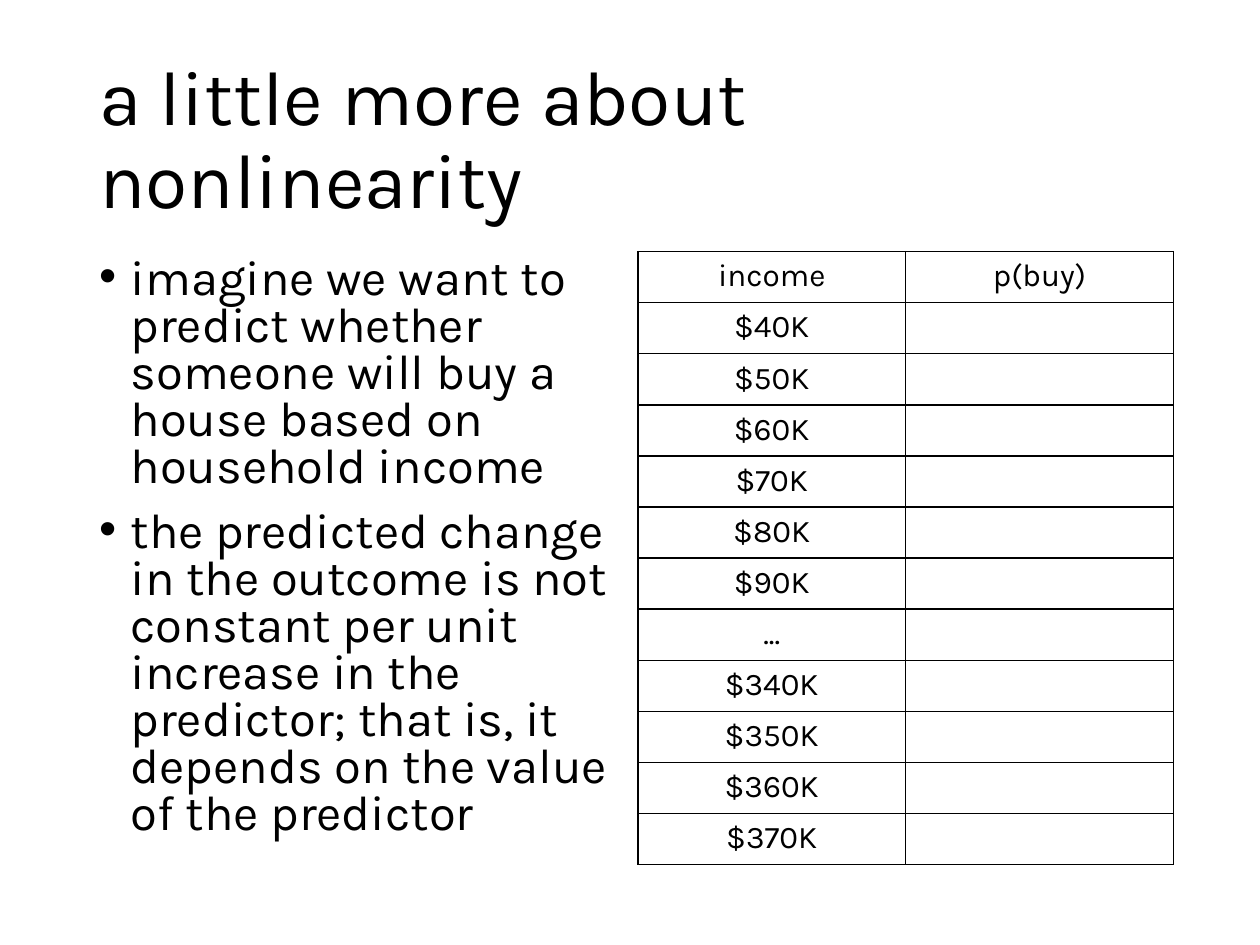
from lxml import etree
from pptx import Presentation
from pptx.dml.color import RGBColor
from pptx.enum.text import MSO_ANCHOR, MSO_AUTO_SIZE, PP_ALIGN
from pptx.oxml.ns import qn
from pptx.util import Pt

LEFT, CENTER = PP_ALIGN.LEFT, PP_ALIGN.CENTER
TOP, MIDDLE = MSO_ANCHOR.TOP, MSO_ANCHOR.MIDDLE
NO_FIT = MSO_AUTO_SIZE.NONE
FONT = "Karla"
COLORS = {"text": "000000", "line": "000000"}

TITLE = "a little more about nonlinearity"
POINTS = [
    "imagine we want to predict whether someone will buy a house based on "
    "household income",
    "the predicted change in the outcome is not constant per unit increase in "
    "the predictor; that is, it depends on the value of the predictor",
]
HEADS = ["income", "p(buy)"]
INCOMES = [
    *(f"${k}K" for k in range(40, 100, 10)),
    "...",
    *(f"${k}K" for k in range(340, 380, 10)),
]


def style(para, size, align):
    """Set the font and alignment of a paragraph."""
    para.alignment = align
    para.font.name = FONT
    para.font.size = Pt(size)
    para.font.color.rgb = RGBColor.from_string(COLORS["text"])


def fill_holder(holder, box, lines, size, spacing, anchor):
    """Move a placeholder and write its paragraphs."""
    holder.left, holder.top, holder.width, holder.height = map(Pt, box)
    frame = holder.text_frame
    frame.text = "\n".join(lines)
    frame.word_wrap = True
    frame.auto_size = NO_FIT
    frame.vertical_anchor = anchor
    for para in frame.paragraphs:
        style(para, size, LEFT)
        para.line_spacing = spacing


def add_bullets(holder, indent, before):
    """Give each paragraph a hanging bullet."""
    for para in holder.text_frame.paragraphs:
        para.space_before = Pt(before)
        props = para._p.get_or_add_pPr()
        props.set("marL", str(Pt(indent)))
        props.set("indent", str(-Pt(indent)))
        etree.SubElement(props, qn("a:buFont"), typeface="Arial")
        etree.SubElement(props, qn("a:buChar"), char="•")


def add_border(cell, width):
    """Draw a solid line on all four sides of a cell."""
    props = cell._tc.get_or_add_tcPr()
    for i, side in enumerate("LRTB"):
        line = etree.Element(qn(f"a:ln{side}"), w=str(Pt(width)))
        fill = etree.SubElement(line, qn("a:solidFill"))
        etree.SubElement(fill, qn("a:srgbClr"), val=COLORS["line"])
        props.insert(i, line)


def add_grid(slide, box, rows):
    """Add a plain ruled table with centred text."""
    shape = slide.shapes.add_table(len(rows), len(rows[0]), *map(Pt, box))
    table = shape.table
    table.first_row = table.horz_banding = False
    for r, row in enumerate(rows):
        for c, text in enumerate(row):
            cell = table.cell(r, c)
            cell.text = text
            cell.fill.background()
            add_border(cell, 1)
            style(cell.text_frame.paragraphs[0], 18, CENTER)


def main():
    """Build and save the slide."""
    deck = Presentation()
    deck.slide_width, deck.slide_height = Pt(720), Pt(540)
    slide = deck.slides.add_slide(deck.slide_layouts[1])
    title, body = slide.placeholders
    fill_holder(title, (49.5, 28.75, 621, 104.4), [TITLE], 44, 0.9, MIDDLE)
    fill_holder(body, (49.5, 143.75, 306, 342.6), POINTS, 28, 0.8, TOP)
    add_bullets(body, 18, 10)
    rows = [HEADS] + [[income, ""] for income in INCOMES]
    add_grid(slide, (364.5, 143.75, 306, 350.4), rows)
    deck.save("out.pptx")


if __name__ == "__main__":
    main()
